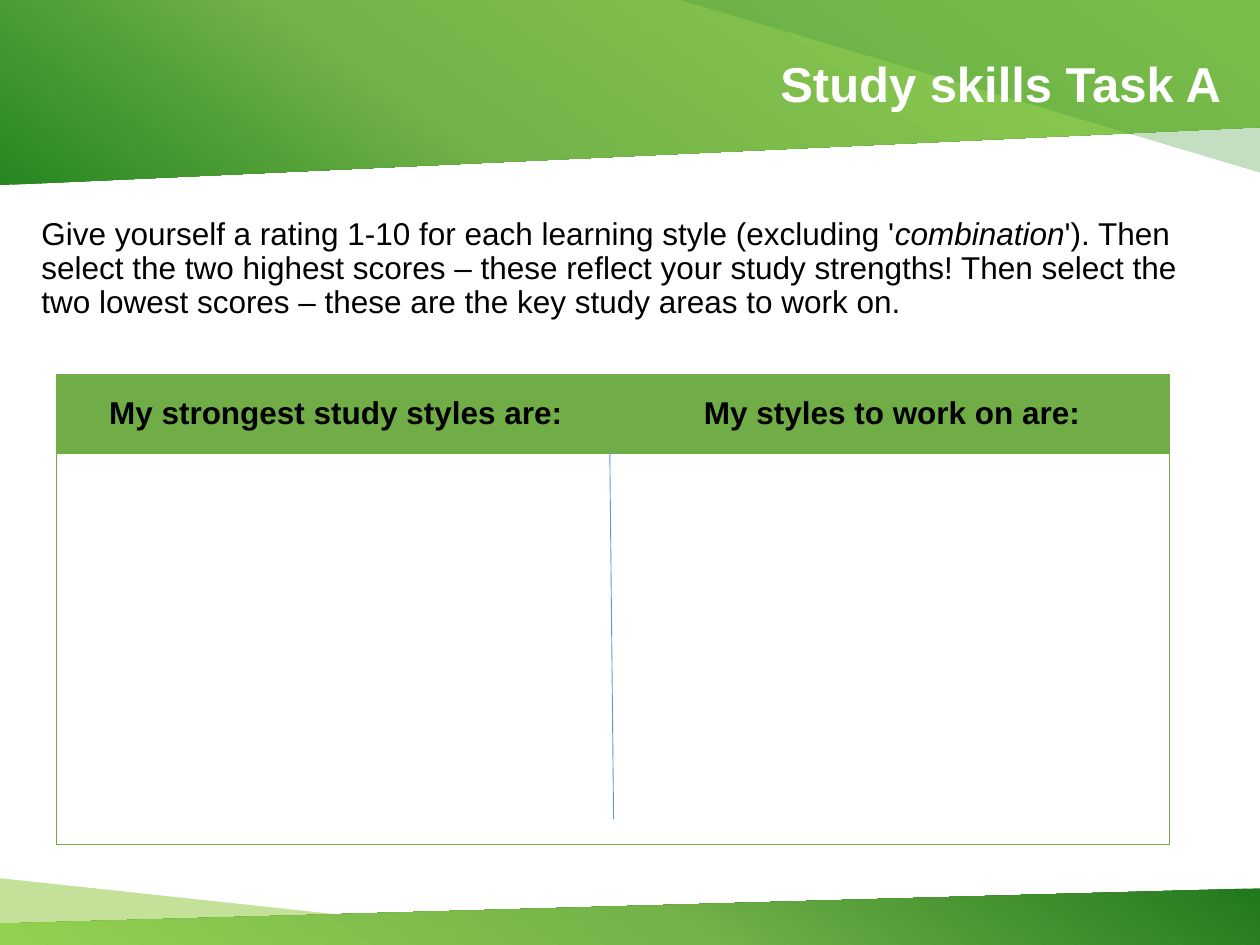
from copy import deepcopy
from dataclasses import dataclass

from lxml.etree import SubElement as Sub
from pptx import Presentation as Deck
from pptx.dml.color import RGBColor as Rgb
from pptx.enum.shapes import MSO_CONNECTOR as Conn
from pptx.enum.text import MSO_ANCHOR as Anchor, MSO_AUTO_SIZE as Auto, PP_ALIGN as Align
from pptx.oxml.ns import qn
from pptx.util import Inches as Inch, Pt


@dataclass(frozen=True)
class Theme:
    face: str = "Arial"
    head: int = 28
    body: int = 18
    lead: float = 0.9
    thin: float = 0.5
    ink: str = "000000"
    white: str = "FFFFFF"
    grid: str = "70AD47"
    rule: str = "5B9BD5"
    mist: str = "94C947"
    shade: str = "43973D"
    top: tuple = ((0, "268721"), (0.36, "74B349"), (1, "92D050"))
    foot: tuple = ((0, "21791D"), (0.48, "74B349"), (1, "92D050"))


T = Theme()
WIDE, HIGH = 10, 7.5


def color(code):
    return Rgb.from_string(code)


def style(font, code, **more):
    font.color.rgb = color(code)
    for name, value in {"name": T.face, "size": Pt(T.body), **more}.items():
        setattr(font, name, value)


def band(slide, points):
    """Add a closed, borderless outline through points given in inches."""
    dots = [(Inch(x), Inch(y)) for x, y in points]
    pen = slide.shapes.build_freeform(*dots[0], scale=1.0)
    pen.add_line_segments(dots[1:], close=True)
    shape = pen.convert_to_shape()
    shape.shadow.inherit = False
    shape.line.fill.background()
    return shape


def tint(shape, code, share):
    """Fill with a colour at the given percentage of opacity."""
    shape.fill.solid()
    shape.fill.fore_color.rgb = color(code)
    tone = shape.fill._xPr.find(".//" + qn("a:srgbClr"))
    Sub(tone, qn("a:alpha")).set("val", str(share * 1000))


def blend(shape, stops, angle):
    """Fill with a three-stop gradient; the angle runs counter-clockwise."""
    fill = shape.fill
    fill.gradient()
    fill.gradient_angle = angle
    row = fill._xPr.find(".//" + qn("a:gsLst"))
    row.append(deepcopy(row[-1]))
    for stop, (place, code) in zip(fill.gradient_stops, stops):
        stop.position = place
        stop.color.rgb = color(code)


def bands(slide):
    tint(band(slide, [(0, 6.97), (4.94, HIGH), (0, HIGH)]), T.mist, 55)
    foot = band(slide, [(0, 7.33), (WIDE, 7.05), (WIDE, HIGH), (0, HIGH)])
    blend(foot, T.foot, 235)
    top = band(slide, [(0, 0), (WIDE, 0), (WIDE, 1.01), (0, 1.47)])
    blend(top, T.top, 55)
    tint(band(slide, [(5.4, 0), (WIDE, 0), (WIDE, 1.37)]), T.shade, 31)


def title(slide, text):
    shape = slide.shapes.title
    slide.shapes._spTree.append(shape._element)  # in front of the bands
    box = {"left": 1.88, "top": 0.38, "width": 7.91, "height": 0.62}
    for name, value in box.items():
        setattr(shape, name, Inch(value))
    frame = shape.text_frame
    frame.text = text
    frame.auto_size = Auto.NONE
    frame.vertical_anchor = Anchor.MIDDLE
    para = frame.paragraphs[0]
    para.alignment, para.line_spacing = Align.RIGHT, T.lead
    style(para.runs[0].font, T.white, size=Pt(T.head), bold=True)


def prose(slide, parts):
    """Add the task text from (words, italic) pairs."""
    box = slide.shapes.add_textbox(*map(Inch, (0.23, 1.68, 9.42, 1)))
    box.text_frame.word_wrap = True
    para = box.text_frame.paragraphs[0]
    para.line_spacing = T.lead
    for words, slant in parts:
        run = para.add_run()
        run.text = words
        style(run.font, T.ink, italic=slant)


def edge(cell, sides):
    """Draw cell borders on the sides named by the letters L, R, T, B."""
    prop = cell._tc.get_or_add_tcPr()
    for side in sides:
        line = Sub(prop, qn(f"a:ln{side}"), w=str(Pt(T.thin)))
        Sub(Sub(line, qn("a:solidFill")), qn("a:srgbClr"), val=T.grid)


def table(slide, heads):
    cols, rows = (4.43, 4.4), (0.63, 3.1)
    size = map(Inch, (0.45, 2.97, sum(cols), sum(rows)))
    grid = slide.shapes.add_table(len(rows), len(cols), *size).table
    grid.first_row = grid.horz_banding = False
    plain = "{2D5ABB26-0587-4C30-8999-92F81FD0307C}"
    grid._tbl.tblPr.find(qn("a:tableStyleId")).text = plain
    for row, high in zip(grid.rows, rows):
        row.height = Inch(high)
    for i, (wide, text) in enumerate(zip(cols, heads)):
        grid.columns[i].width = Inch(wide)
        head, blank = grid.cell(0, i), grid.cell(1, i)
        side = "LR"[i]
        edge(head, side + "T")
        edge(blank, side + "TB")
        head.fill.solid()
        head.fill.fore_color.rgb = color(T.grid)
        blank.fill.background()
        head.text = text
        head.vertical_anchor = Anchor.MIDDLE
        para = head.text_frame.paragraphs[0]
        para.alignment = Align.CENTER
        style(para.runs[0].font, T.ink, bold=True)


def rule(slide, start, end):
    line = slide.shapes.add_connector(Conn.STRAIGHT, *map(Inch, start + end))
    line.line.color.rgb = color(T.rule)
    line.line.width = Pt(T.thin)
    Sub(line._element.spPr, qn("a:effectLst"))


def main():
    deck = Deck()
    deck.slide_width, deck.slide_height = Inch(WIDE), Inch(HIGH)
    slide = deck.slides.add_slide(deck.slide_layouts[5])
    bands(slide)
    prose(slide, [
        ("Give yourself a rating 1-10 for each learning style (excluding '", False),
        ("combination", True),
        ("'). Then select the two highest scores – these reflect your study "
         "strengths! Then select the two lowest scores – these are the key "
         "study areas to work on.", False),
    ])
    title(slide, "Study skills Task A")
    table(slide, ["My strongest study styles are:", "My styles to work on are:"])
    rule(slide, (4.84, 3.59), (4.87, 6.5))
    deck.save("out.pptx")


if __name__ == "__main__":
    main()
